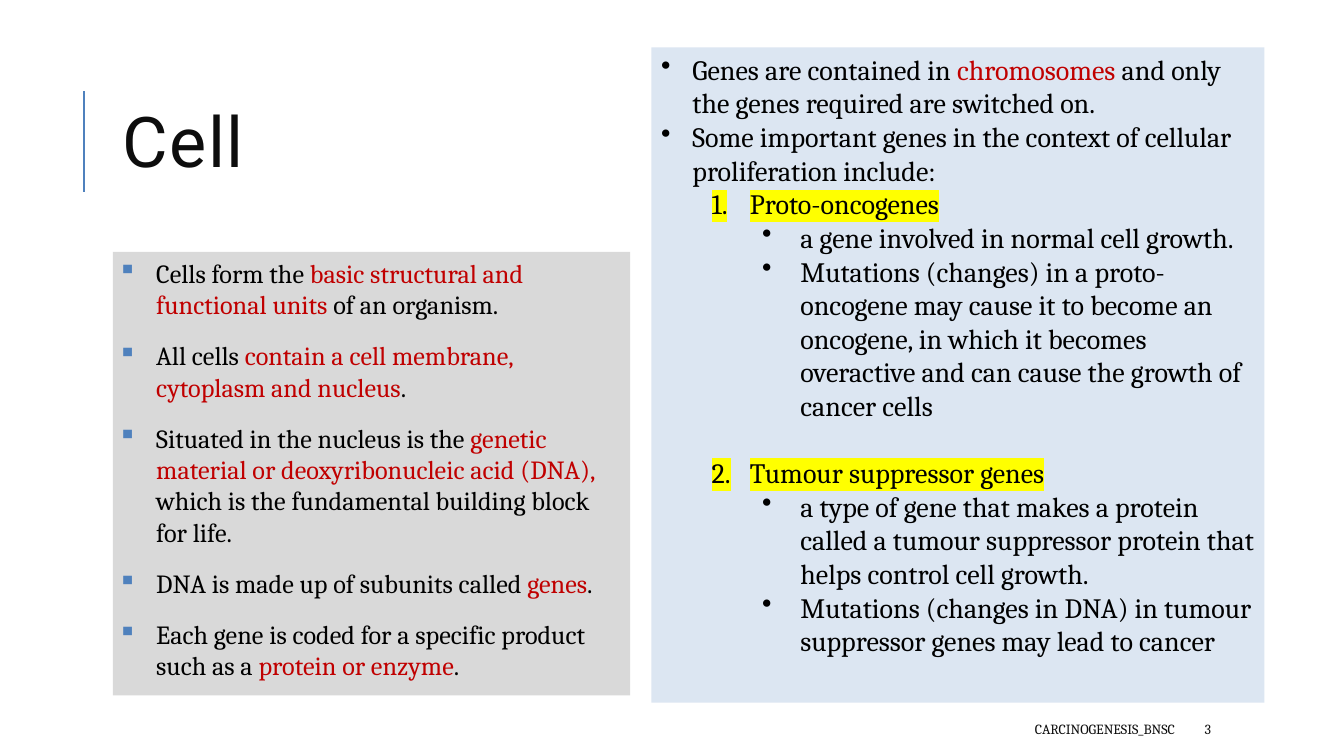
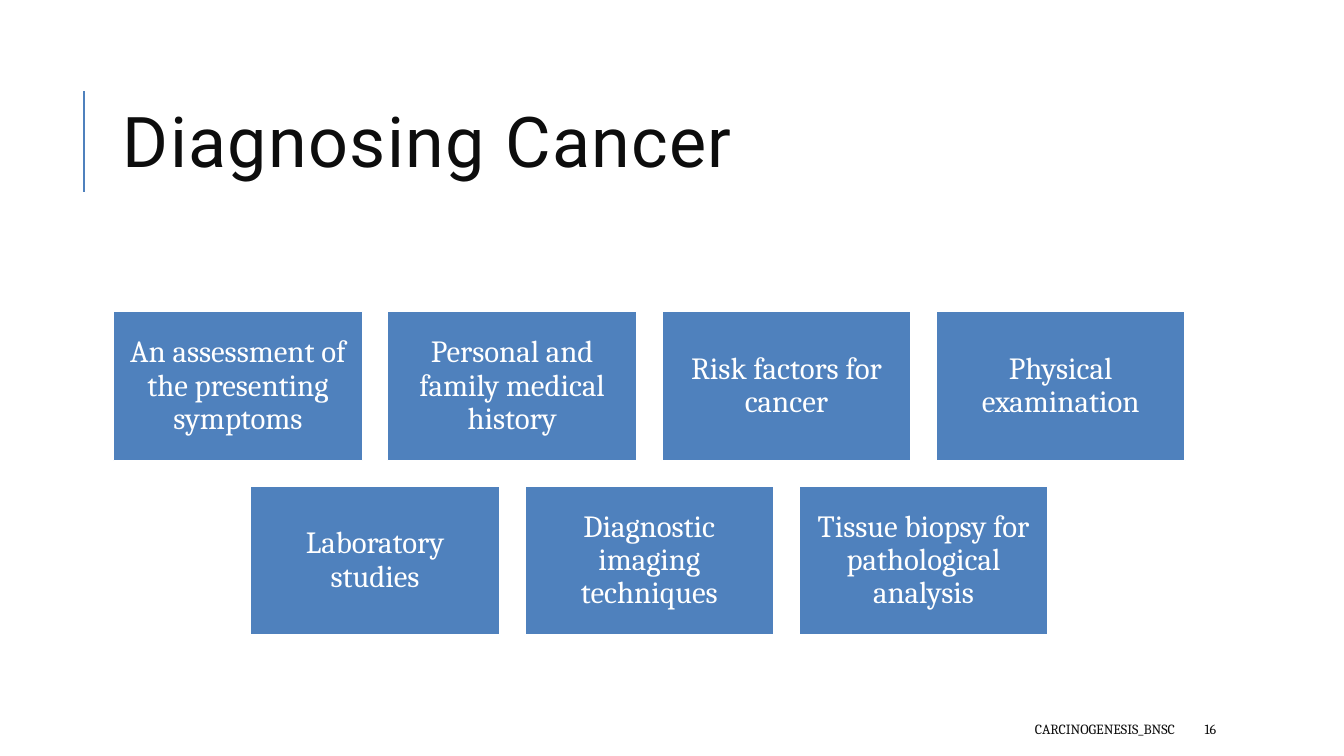
from lxml.etree import SubElement
from pptx import Presentation
from pptx.dml.color import RGBColor
from pptx.enum.shapes import MSO_CONNECTOR, MSO_SHAPE
from pptx.enum.text import MSO_ANCHOR, PP_ALIGN
from pptx.oxml.ns import qn
from pptx.util import Inches, Pt

COLORS = {
    "accent": "4F81BD",
    "title": "0D0D0D",
    "text": "000000",
    "emphasis": "C00000",
    "highlight": "FFFF00",
    "gray": "D9D9D9",
    "pale": "DCE6F2",
    "white": "FFFFFF",
}

CELL_FACTS = [
    "Cells form the |basic structural and functional units| of an organism.",
    "All cells |contain a cell membrane, cytoplasm and nucleus|.",
    "Situated in the nucleus is the |genetic material or deoxyribonucleic acid (DNA),| "
    "which is the fundamental building block for life.",
    "DNA is made up of subunits called |genes|.",
    "Each gene is coded for a specific product such as a |protein or enzyme|.",
]

GENE_INTRO = [
    "Genes are contained in |chromosomes| and only the genes required are switched on.",
    "Some important genes in the context of cellular proliferation include:",
]

GENE_TYPES = [
    ("Proto-oncogenes", [
        "a gene involved in normal cell growth.",
        "Mutations (changes) in a proto-oncogene may cause it to become an oncogene, "
        "in which it becomes overactive and can cause the growth of cancer cells",
    ]),
    ("Tumour suppressor genes", [
        "a type of gene that makes a protein called a tumour suppressor protein "
        "that helps control cell growth.",
        "Mutations (changes in DNA) in tumour suppressor genes may lead to cancer",
    ]),
]

DIAGNOSIS_ROWS = [
    ["An assessment of the presenting symptoms", "Personal and family medical history",
     "Risk factors for cancer", "Physical examination"],
    ["Laboratory studies", "Diagnostic imaging techniques",
     "Tissue biopsy for pathological analysis"],
]


def color(name):
    """Return the named palette colour."""
    return RGBColor.from_string(COLORS[name])


class Deck:
    """Holds the presentation style and the current slide."""

    body_font = "Cambria"
    title_font = "Roboto"

    def __init__(self):
        """Start a widescreen presentation."""
        self.presentation = Presentation()
        self.presentation.slide_width = Inches(13.33)
        self.presentation.slide_height = Inches(7.5)
        self.slide = None

    def add_slide(self, title, number, title_width):
        """Add a slide with its title, side rule and footer."""
        self.slide = self.presentation.slides.add_slide(self.presentation.slide_layouts[6])
        self.rule(0.83, 0.9, 1.9)
        frame = self.text_frame(1.12, 0.64, title_width, 1.64)
        paragraph = self.add_text(frame, title, 50, "title", self.title_font)
        paragraph.line_spacing = 0.8
        paragraph.runs[0]._r.get_or_add_rPr().set("spc", "100")
        footer = self.text_frame(5.3, 7.08, 6.45, 0.3)
        self.add_text(footer, "CARCINOGENESIS_BNSC", 10, "title").alignment = PP_ALIGN.RIGHT
        self.add_text(self.text_frame(11.85, 7.08, 1.06, 0.3), str(number), 10, "title")

    def rule(self, left, top, bottom):
        """Draw a vertical accent line."""
        line = self.slide.shapes.add_connector(
            MSO_CONNECTOR.STRAIGHT, Inches(left), Inches(bottom), Inches(left), Inches(top))
        line.line.color.rgb = color("accent")
        line.line.width = Pt(1.5)
        SubElement(line._element.spPr, qn("a:effectLst"))

    def text_frame(self, left, top, width, height):
        """Add a vertically centred text box and return its frame."""
        shape = self.slide.shapes.add_textbox(
            Inches(left), Inches(top), Inches(width), Inches(height))
        frame = shape.text_frame
        frame.word_wrap = True
        frame.vertical_anchor = MSO_ANCHOR.MIDDLE
        return frame

    def panel(self, left, top, width, height, fill, anchor=MSO_ANCHOR.TOP, inset=None, line=None):
        """Add a filled rectangle and return its text frame."""
        shape = self.slide.shapes.add_shape(
            MSO_SHAPE.RECTANGLE, Inches(left), Inches(top), Inches(width), Inches(height))
        shape.shadow.inherit = False
        shape.fill.solid()
        shape.fill.fore_color.rgb = color(fill)
        if line:
            shape.line.color.rgb = color(line)
            shape.line.width = Pt(1.25)
        else:
            shape.line.fill.background()
        frame = shape.text_frame
        frame.word_wrap = True
        frame.vertical_anchor = anchor
        if inset is not None:
            frame.margin_left = frame.margin_right = Inches(inset)
            frame.margin_top = frame.margin_bottom = Inches(inset)
        return frame

    def add_text(self, frame, text, size, text_color="text", font=None):
        """Add a paragraph whose parts between bars are emphasised."""
        paragraph = frame.paragraphs[0]
        if paragraph.runs:
            paragraph = frame.add_paragraph()
        paragraph.alignment = PP_ALIGN.LEFT
        paragraph.font.size = Pt(size)
        paragraph.font.name = font or self.body_font
        parts = text.split("|")
        if len(parts) == 1:
            paragraph.font.color.rgb = color(text_color)
        for index, part in enumerate(parts):
            run = paragraph.add_run()
            run.text = part
            if len(parts) > 1:
                run.font.color.rgb = color("emphasis" if index % 2 else text_color)
        return paragraph

    def item(self, frame, text, size, margin, hanging, bullet="•", number=None, bullet_color=None):
        """Add a bulleted or numbered list item."""
        paragraph = self.add_text(frame, text, size)
        properties = paragraph._p.get_or_add_pPr()
        properties.set("marL", str(Inches(margin)))
        properties.set("indent", str(-Inches(hanging)))
        defaults = properties.find(qn("a:defRPr"))
        if bullet_color:
            mark_color = properties.makeelement(qn("a:buClr"), {})
            SubElement(mark_color, qn("a:srgbClr"), val=COLORS[bullet_color])
            defaults.addprevious(mark_color)
        if number:
            mark = properties.makeelement(
                qn("a:buAutoNum"), {"type": "arabicPeriod", "startAt": str(number)})
        else:
            mark = properties.makeelement(qn("a:buChar"), {"char": bullet})
        defaults.addprevious(mark)
        return paragraph

    def highlight(self, paragraph):
        """Mark the whole paragraph with the highlight colour."""
        for run in paragraph.runs:
            run.font.color.rgb = color("text")
            marker = run._r.rPr.makeelement(qn("a:highlight"), {})
            SubElement(marker, qn("a:srgbClr"), val=COLORS["highlight"])
            run._r.rPr.find(qn("a:solidFill")).addnext(marker)

    def card_rows(self, rows, center, top, width, height, gap):
        """Lay out centred rows of captioned cards."""
        for row_index, captions in enumerate(rows):
            row_width = len(captions) * (width + gap) - gap
            for column, caption in enumerate(captions):
                frame = self.panel(
                    center - row_width / 2 + column * (width + gap),
                    top + row_index * (height + gap), width, height,
                    "accent", MSO_ANCHOR.MIDDLE, 0.09, "white")
                paragraph = self.add_text(frame, caption, 22, "white")
                paragraph.alignment = PP_ALIGN.CENTER
                paragraph.line_spacing = 0.9


def build_cell_slide(deck):
    """Build the slide about cells and genes."""
    deck.add_slide("Cell", 3, 6.08)
    facts = deck.panel(1.12, 2.5, 5.13, 4.4, "gray", inset=0.05)
    for fact in CELL_FACTS:
        paragraph = deck.item(facts, fact, 18.7, 0.38, 0.38, "▪", bullet_color="accent")
        paragraph.space_after = Pt(14)
    genes = deck.panel(6.46, 0.47, 6.08, 6.5, "pale")
    for sentence in GENE_INTRO:
        deck.item(genes, sentence, 20, 0.31, 0.31)
    for number, (name, details) in enumerate(GENE_TYPES, 1):
        heading = deck.item(genes, name, 20, 0.88, 0.38, number=number)
        deck.highlight(heading)
        if number > 1:
            heading.space_before = Pt(24)
        for detail in details:
            deck.item(genes, detail, 20, 1.38, 0.38)


def build_diagnosis_slide(deck):
    """Build the slide about diagnosing cancer."""
    deck.add_slide("Diagnosing Cancer", 16, 10.63)
    deck.card_rows(DIAGNOSIS_ROWS, center=6.44, top=3.09, width=2.47, height=1.48, gap=0.25)


def main():
    """Build and save the presentation."""
    deck = Deck()
    build_cell_slide(deck)
    build_diagnosis_slide(deck)
    deck.presentation.save("out.pptx")


if __name__ == "__main__":
    main()
